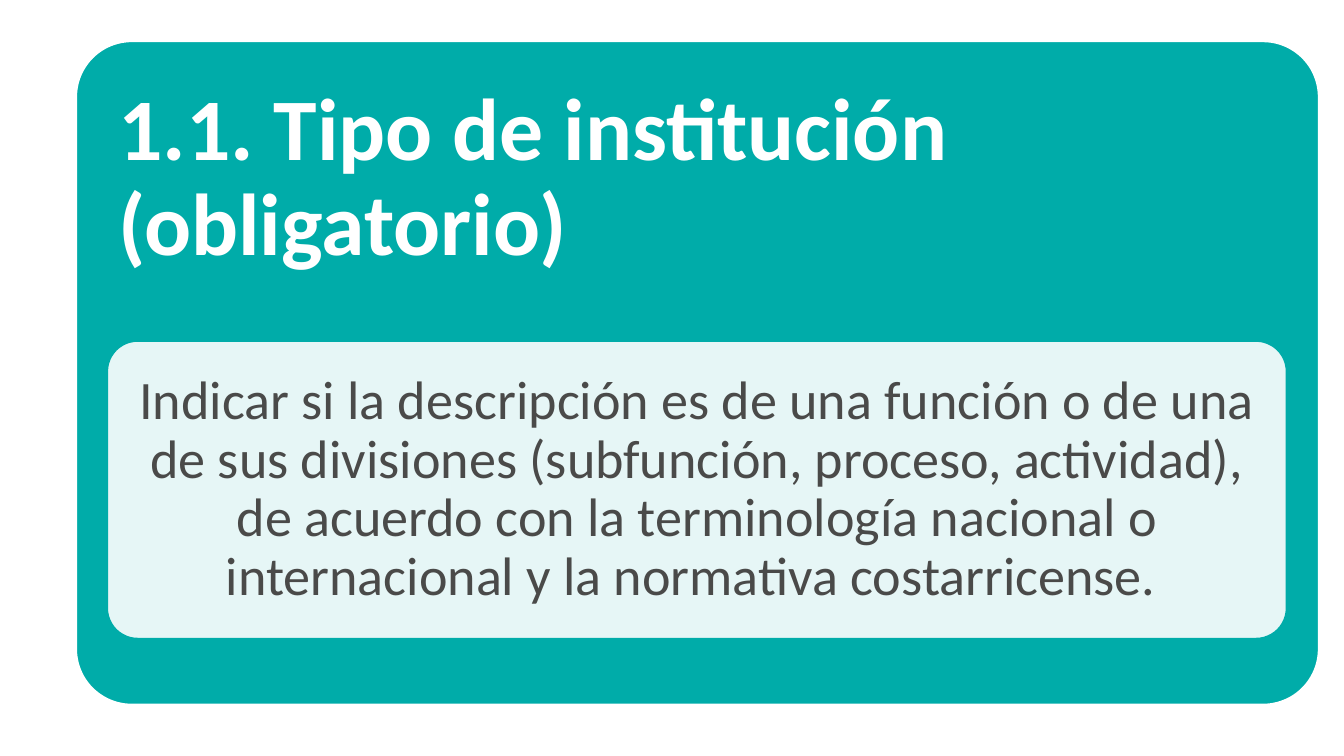
"""Build the slide that explains the institution type field."""
from pptx import Presentation
from pptx.dml.color import RGBColor
from pptx.enum.shapes import MSO_SHAPE as Shape
from pptx.enum.text import MSO_ANCHOR as Anchor, MSO_AUTO_SIZE as AutoSize, PP_ALIGN as Align
from pptx.oxml.ns import qn
from pptx.util import Inches, Pt
from lxml import etree

TEAL = RGBColor(0x00, 0xAC, 0xA9)
WHITE = RGBColor(0xFF, 0xFF, 0xFF)
GRAY = RGBColor(0x4A, 0x4A, 0x49)

HEADING = "1.1. Tipo de institución (obligatorio)"
GUIDANCE = (
    "Indicar si la descripción es de una función o de una de sus divisiones "
    "(subfunción, proceso, actividad), de acuerdo con la terminología nacional o "
    "internacional y la normativa costarricense. "
)


def apply_format(target, values):
    """Set each attribute named in values on target."""
    for attribute, value in values.items():
        setattr(target, attribute, value)


def add_panel(slide, box, corner, fill, outline, opacity=100):
    """Add a rounded panel with an outline and a given opacity."""
    panel = slide.shapes.add_shape(Shape.ROUNDED_RECTANGLE, *map(Inches, box))
    panel.adjustments[0] = corner
    panel.shadow.inherit = False
    panel.fill.solid()
    panel.fill.fore_color.rgb = fill
    panel.line.color.rgb = outline
    panel.line.width = Pt(2)
    if opacity < 100:
        color = panel.fill._xPr.find(qn("a:solidFill"))[0]
        etree.SubElement(color, qn("a:alpha"), val=str(opacity * 1000))


def write_text(holder, box, text, margins, anchor, align, color, font):
    """Place a text holder and fill it with one formatted paragraph."""
    apply_format(holder, dict(zip(("left", "top", "width", "height"), map(Inches, box))))
    frame = holder.text_frame
    sides = ("margin_left", "margin_top", "margin_right", "margin_bottom")
    apply_format(frame, dict(zip(sides, map(Inches, margins))))
    apply_format(frame, {"word_wrap": True, "auto_size": AutoSize.NONE, "vertical_anchor": anchor})
    paragraph = frame.paragraphs[0]
    apply_format(paragraph, {"alignment": align, "line_spacing": 0.9})
    run = paragraph.add_run()
    run.text = text
    apply_format(run.font, {"name": "Calibri", **font})
    run.font.color.rgb = color


def main():
    """Build and save the slide."""
    deck = Presentation()
    deck.slide_width, deck.slide_height = Inches(10), Inches(10 * 9 / 16)
    slide = deck.slides.add_slide(deck.slide_layouts[5])

    add_panel(slide, (0.56, 0.3, 9.26, 4.95), 0.085, TEAL, WHITE)
    heading = slide.shapes.title
    slide.shapes._spTree.append(heading._element)
    write_text(heading, (0.68, 0.43, 9.01, 4.7), HEADING, (0.2, 0.2, 0.2, 3.05),
               Anchor.TOP, Align.LEFT, WHITE, {"size": Pt(47), "bold": True})

    add_panel(slide, (0.79, 2.53, 8.79, 2.23), 0.105, WHITE, TEAL, opacity=90)
    guidance_box = (0.86, 2.6, 8.66, 2.09)
    guidance = slide.shapes.add_textbox(*map(Inches, guidance_box))
    write_text(guidance, guidance_box, GUIDANCE, (0.12,) * 4,
               Anchor.MIDDLE, Align.CENTER, GRAY, {"size": Pt(29)})

    deck.save("out.pptx")


if __name__ == "__main__":
    main()
